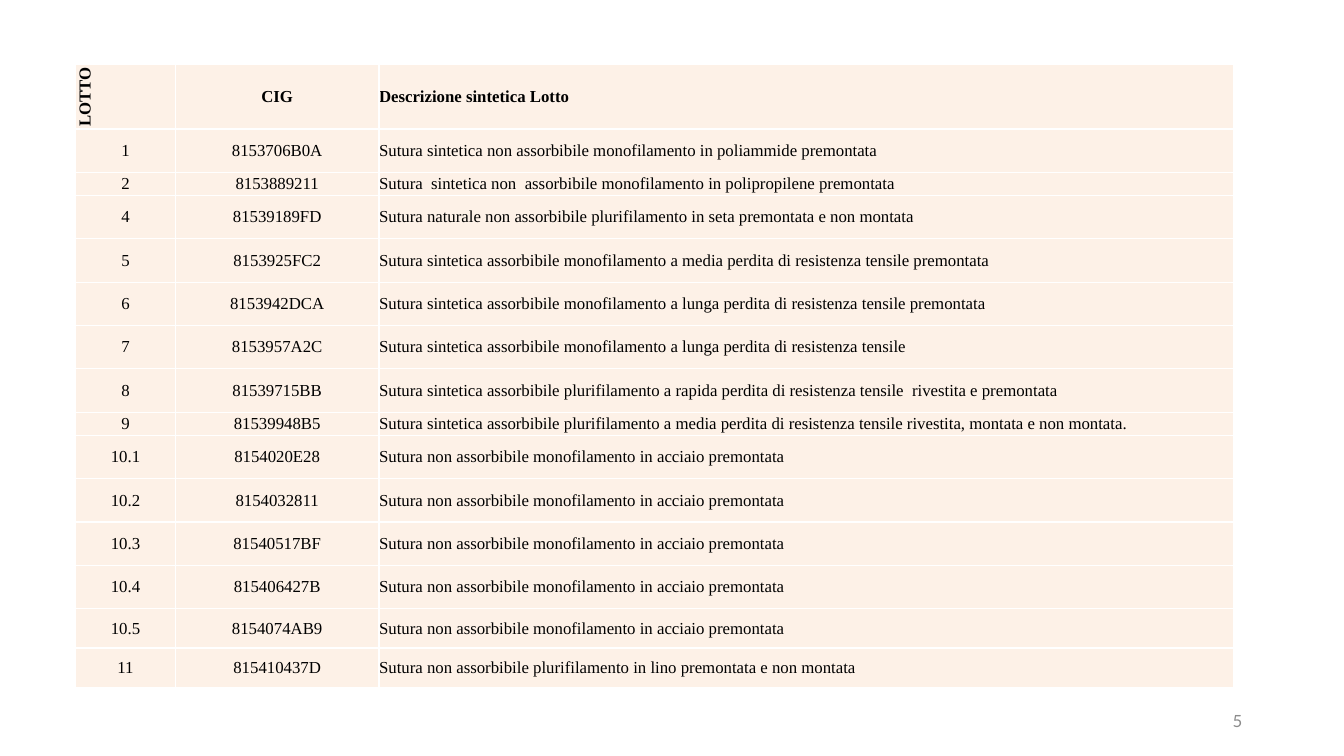
from dataclasses import dataclass

from lxml.etree import SubElement
from pptx import Presentation
from pptx.dml.color import RGBColor
from pptx.enum.text import MSO_ANCHOR, PP_ALIGN
from pptx.oxml.ns import qn
from pptx.util import Inches, Pt


@dataclass(frozen=True)
class Theme:
    table_font: str = "Times New Roman"
    number_font: str = "Lato"
    size: int = 12
    text: str = "000000"
    muted: str = "8C8C8C"
    cell: str = "FDF1E7"
    border: str = "FFFFFF"
    border_width: int = 1


THEME = Theme()
STEEL = "Sutura non assorbibile monofilamento in acciaio premontata"
TALL, MEDIUM, SHORT = 0.43, 0.39, 0.23
COLUMN_WIDTHS = (0.99, 2.02, 8.48)
ALIGNMENTS = (PP_ALIGN.CENTER, PP_ALIGN.CENTER, PP_ALIGN.LEFT)
# Row height, lot, code, description
LOTS = [
    (0.64, "LOTTO", "CIG", "Descrizione sintetica Lotto"),
    (TALL, "1", "8153706B0A", "Sutura sintetica non assorbibile monofilamento in poliammide premontata"),
    (SHORT, "2", "8153889211", "Sutura  sintetica non  assorbibile monofilamento in polipropilene premontata"),
    (TALL, "4", "81539189FD", "Sutura naturale non assorbibile plurifilamento in seta premontata e non montata"),
    (TALL, "5", "8153925FC2",
     "Sutura sintetica assorbibile monofilamento a media perdita di resistenza tensile premontata"),
    (TALL, "6", "8153942DCA",
     "Sutura sintetica assorbibile monofilamento a lunga perdita di resistenza tensile premontata"),
    (TALL, "7", "8153957A2C", "Sutura sintetica assorbibile monofilamento a lunga perdita di resistenza tensile"),
    (TALL, "8", "81539715BB",
     "Sutura sintetica assorbibile plurifilamento a rapida perdita di resistenza tensile  rivestita e premontata"),
    (SHORT, "9", "81539948B5",
     "Sutura sintetica assorbibile plurifilamento a media perdita di resistenza tensile rivestita, "
     "montata e non montata."),
    (TALL, "10.1", "8154020E28", STEEL),
    (TALL, "10.2", "8154032811", STEEL),
    (TALL, "10.3", "81540517BF", STEEL),
    (TALL, "10.4", "815406427B", STEEL),
    (MEDIUM, "10.5", "8154074AB9", STEEL),
    (MEDIUM, "11", "815410437D", "Sutura non assorbibile plurifilamento in lino premontata e non montata"),
]


def write(text_frame, text, alignment, font_name, color, bold=False):
    text_frame.text = text
    paragraph = text_frame.paragraphs[0]
    paragraph.alignment = alignment
    font = paragraph.runs[0].font
    font.name, font.size, font.bold = font_name, Pt(THEME.size), bold
    font.color.rgb = RGBColor.from_string(color)


def add_borders(cell):
    properties = cell._tc.get_or_add_tcPr()
    for side in ("a:lnL", "a:lnR", "a:lnT", "a:lnB"):
        line = SubElement(properties, qn(side), w=str(Pt(THEME.border_width)))
        fill = SubElement(line, qn("a:solidFill"))
        SubElement(fill, qn("a:srgbClr"), val=THEME.border)


presentation = Presentation()
presentation.slide_width, presentation.slide_height = Inches(13.33), Inches(7.5)
slide = presentation.slides.add_slide(presentation.slide_layouts[6])

table = slide.shapes.add_table(
    len(LOTS), len(COLUMN_WIDTHS), Inches(0.75), Inches(0.64),
    Inches(sum(COLUMN_WIDTHS)), Inches(sum(lot[0] for lot in LOTS)),
).table
for column, width in zip(table.columns, COLUMN_WIDTHS):
    column.width = Inches(width)

for row_index, (height, *texts) in enumerate(LOTS):
    table.rows[row_index].height = Inches(height)
    for column_index, (text, alignment) in enumerate(zip(texts, ALIGNMENTS)):
        cell = table.cell(row_index, column_index)
        add_borders(cell)
        cell.fill.solid()
        cell.fill.fore_color.rgb = RGBColor.from_string(THEME.cell)
        cell.margin_left = cell.margin_right = cell.margin_top = cell.margin_bottom = 0
        cell.vertical_anchor = MSO_ANCHOR.MIDDLE
        write(cell.text_frame, text, alignment, THEME.table_font, THEME.text, bold=row_index == 0)
table.cell(0, 0)._tc.get_or_add_tcPr().set("vert", "vert270")

page_number = slide.shapes.add_textbox(Inches(9.42), Inches(6.95), Inches(3), Inches(0.4))
page_number.text_frame.word_wrap = True
page_number.text_frame.vertical_anchor = MSO_ANCHOR.MIDDLE
write(page_number.text_frame, "5", PP_ALIGN.RIGHT, THEME.number_font, THEME.muted)

presentation.save("out.pptx")
